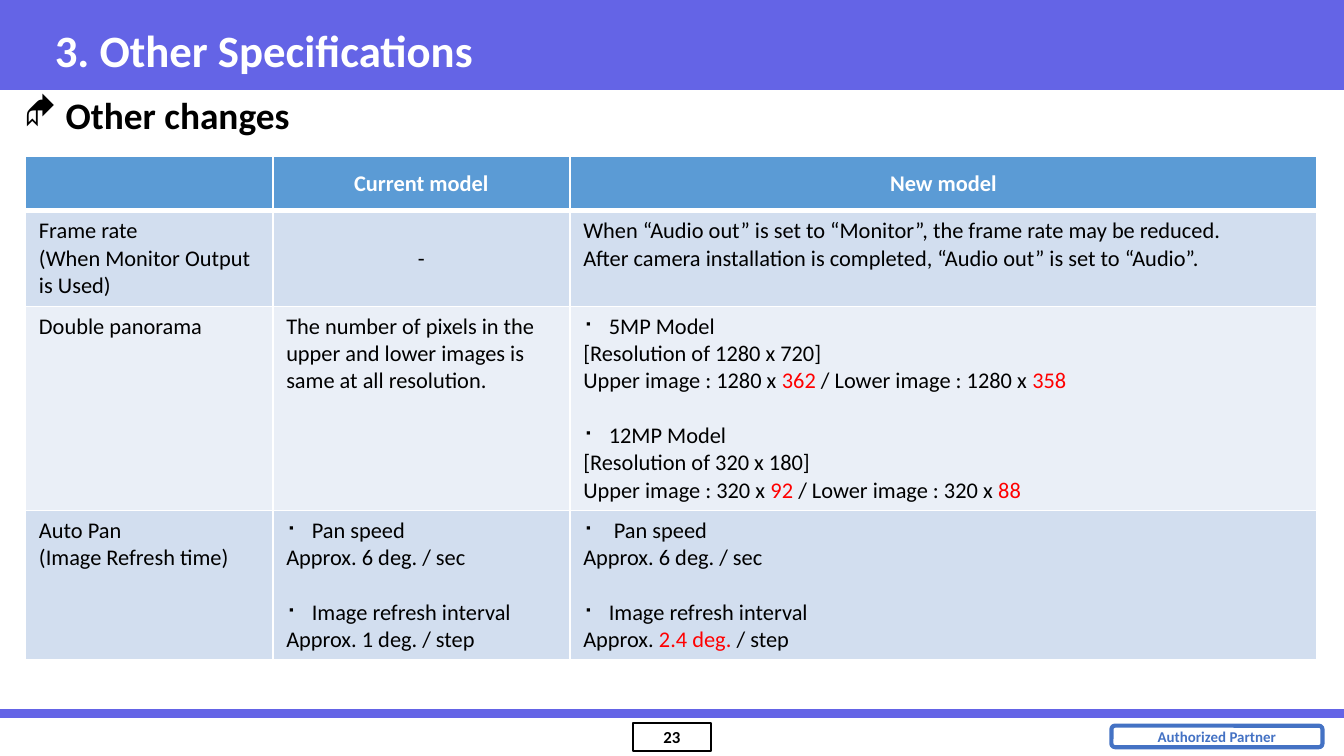
from lxml import etree
from pptx import Presentation
from pptx import util as u
from pptx.dml.color import RGBColor
from pptx.enum import shapes, text
from pptx.oxml import ns

Inches, Pt = u.Inches, u.Pt
FONT = "Calibri"
BULLET_FONT = "Wingdings"
PURPLE = RGBColor(0x64, 0x64, 0xE6)
BADGE_BLUE = RGBColor(0x44, 0x72, 0xC4)
HEADER_BLUE = RGBColor(0x5B, 0x9B, 0xD5)
BAND_DARK = RGBColor(0xD2, 0xDE, 0xEF)
BAND_LIGHT = RGBColor(0xEA, 0xEF, 0xF7)
BLACK = RGBColor(0, 0, 0)
WHITE = RGBColor(0xFF, 0xFF, 0xFF)
RED = RGBColor(0xFF, 0, 0)
CENTER = text.PP_ALIGN.CENTER
MIDDLE = text.MSO_ANCHOR.MIDDLE

# Table content: "■" starts a bulleted line, asterisks enclose changed values
ROWS = [
    ["", "Current model", "New model"],
    [
        ["Frame rate", "(When Monitor Output is Used)"],
        "-",
        ["When “Audio out” is set to “Monitor”, the frame rate may be reduced.",
         "After camera installation is completed, “Audio out” is set to “Audio”."],
    ],
    [
        ["Double panorama"],
        ["The number of pixels in the upper and lower images is same at all resolution."],
        ["■5MP Model", "[Resolution of 1280 x 720]",
         "Upper image : 1280 x *362 */ Lower image : 1280 x *358*",
         "■12MP Model", "[Resolution of 320 x 180]",
         "Upper image : 320 x *92 */ Lower image : 320 x *88*"],
    ],
    [
        ["Auto Pan", "(Image Refresh time)"],
        ["■Pan speed", "Approx. 6 deg. / sec",
         "■Image refresh interval", "Approx. 1 deg. / step"],
        ["■ Pan speed", "Approx. 6 deg. / sec",
         "■Image refresh interval", "Approx. *2.4 deg. */ step"],
    ],
]
COLUMN_WIDTHS = [1.84, 2.21, 5.56]
ROW_HEIGHTS = [0.41, 0.71, 1.52, 1.11]
ROW_FILLS = [HEADER_BLUE, BAND_DARK, BAND_LIGHT, BAND_DARK]


class SlideBuilder:
    def __init__(self, slide):
        self.slide = slide

    def style(self, font, size, color, bold=False):
        font.name, font.size, font.bold = FONT, Pt(size), bold
        font.color.rgb = color

    def bullet(self, paragraph, char, indent):
        properties = paragraph._p.get_or_add_pPr()
        properties.set("marL", str(Inches(indent)))
        properties.set("indent", str(-Inches(indent)))
        etree.SubElement(properties, ns.qn("a:buFont")).set("typeface", BULLET_FONT)
        etree.SubElement(properties, ns.qn("a:buChar")).set("char", char)

    def box(self, kind, left, top, width, height, fill=None, line=None, weight=1):
        shape = self.slide.shapes.add_shape(
            kind, Inches(left), Inches(top), Inches(width), Inches(height))
        shape.shadow.inherit = False
        if fill is None:
            shape.fill.background()
        else:
            shape.fill.solid()
            shape.fill.fore_color.rgb = fill
        if line is None:
            shape.line.fill.background()
        else:
            shape.line.color.rgb = line
            shape.line.width = Pt(weight)
        return shape

    def label(self, shape, content, size, color, wrap=True):
        frame = shape.text_frame
        frame.text = content
        frame.word_wrap = wrap
        frame.vertical_anchor = MIDDLE
        frame.paragraphs[0].alignment = CENTER
        self.style(frame.paragraphs[0].runs[0].font, size, color, True)

    def heading(self, content, left, top, width, height, size, color, anchor, char=None):
        area = self.slide.shapes.add_textbox(
            Inches(left), Inches(top), Inches(width), Inches(height))
        frame = area.text_frame
        frame.word_wrap = True
        frame.vertical_anchor = anchor
        frame.text = content
        if char:
            self.bullet(frame.paragraphs[0], char, 0.31)
        self.style(frame.paragraphs[0].runs[0].font, size, color, True)

    def rule(self, x1, y1, x2, y2, color, weight):
        line = self.slide.shapes.add_connector(
            shapes.MSO_CONNECTOR.STRAIGHT, Inches(x1), Inches(y1), Inches(x2), Inches(y2))
        line.line.color.rgb = color
        line.line.width = Pt(weight)
        etree.SubElement(line._element.spPr, ns.qn("a:effectLst"))

    def borders(self, cell, color, **weights):
        properties = cell._tc.get_or_add_tcPr()
        for side in "LRTB":
            edge = etree.SubElement(properties, ns.qn("a:ln" + side))
            edge.set("w", str(Pt(weights.get(side, 1))))
            fill = etree.SubElement(edge, ns.qn("a:solidFill"))
            etree.SubElement(fill, ns.qn("a:srgbClr")).set("val", str(color))

    def cell_text(self, cell, lines, color, bold):
        frame = cell.text_frame
        for index, line in enumerate(lines):
            paragraph = frame.add_paragraph() if index else frame.paragraphs[0]
            if line.startswith("■"):
                self.bullet(paragraph, "■", 0.19)
                if index:
                    paragraph.space_before = Pt(14.6)
            self.style(paragraph.font, 12, color, bold)
            for part, piece in enumerate(line.removeprefix("■").split("*")):
                if piece:
                    run = paragraph.add_run()
                    run.text = piece
                    self.style(run.font, 12, RED if part % 2 else color, bold)

    def table(self, left, top, rows, widths, heights, fills):
        grid = self.slide.shapes.add_table(
            len(rows), len(widths), Inches(left), Inches(top),
            Inches(sum(widths)), Inches(sum(heights))).table
        for column, width in zip(grid.columns, widths):
            column.width = Inches(width)
        for r, (row, height) in enumerate(zip(rows, heights)):
            grid.rows[r].height = Inches(height)
            for c, content in enumerate(row):
                cell = grid.cell(r, c)
                self.borders(cell, WHITE, T=3 if r == 1 else 1, B=3 if r == 0 else 1)
                cell.fill.solid()
                cell.fill.fore_color.rgb = fills[r]
                centered = isinstance(content, str)
                self.cell_text(cell, [content] if centered else content,
                               BLACK if r else WHITE, r == 0)
                if centered:
                    cell.vertical_anchor = MIDDLE
                    cell.text_frame.paragraphs[0].alignment = CENTER


def main():
    deck = Presentation()
    # Widescreen, 16:9
    deck.slide_width = Inches(10)
    deck.slide_height = deck.slide_width * 9 // 16
    page = SlideBuilder(deck.slides.add_slide(deck.slide_layouts[6]))
    kinds = shapes.MSO_SHAPE

    # Title band
    page.box(kinds.RECTANGLE, 0, 0, 10, 0.67, fill=PURPLE)

    # Footer: page number, rule and partner badge
    number = page.box(kinds.RECTANGLE, 4.71, 5.38, 0.58, 0.21, line=BLACK)
    frame = number.text_frame
    frame.margin_left = frame.margin_right = Inches(0.03)
    frame.margin_top = frame.margin_bottom = Inches(0.03)
    page.label(number, "23", 9, BLACK)
    page.rule(0, 5.31, 10, 5.31, PURPLE, 4.5)
    badge = page.box(kinds.ROUNDED_RECTANGLE, 8.27, 5.4, 1.57, 0.16,
                     line=BADGE_BLUE, weight=2.25)
    page.label(badge, "Authorized Partner", 8, BADGE_BLUE, wrap=False)

    # Title, comparison table and section heading
    page.heading("3. Other Specifications", 0.31, 0.08, 9.26, 0.58, 24, WHITE, MIDDLE)
    page.table(0.19, 1.16, ROWS, COLUMN_WIDTHS, ROW_HEIGHTS, ROW_FILLS)
    page.heading("Other changes", 0.08, 0.63, 6.55, 0.44, 20, BLACK,
                 text.MSO_ANCHOR.BOTTOM, "◆")

    deck.save("out.pptx")


if __name__ == "__main__":
    main()
